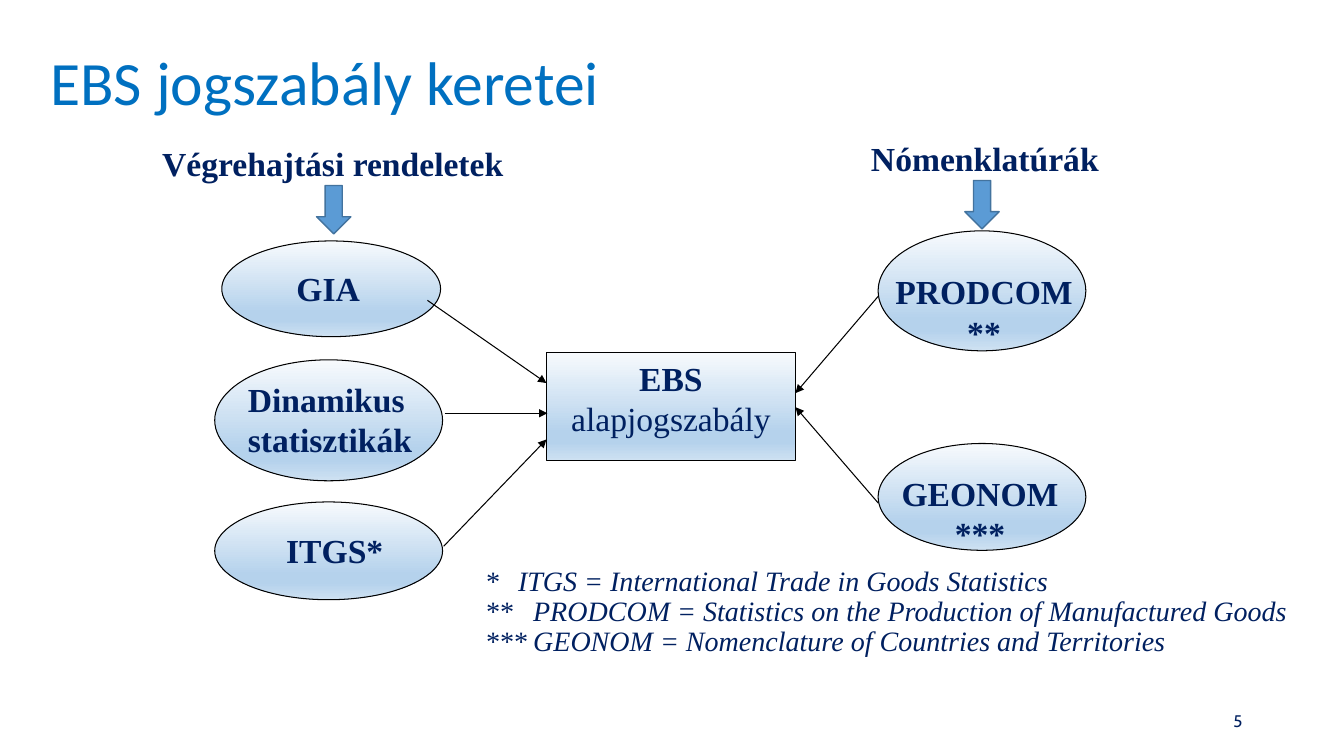
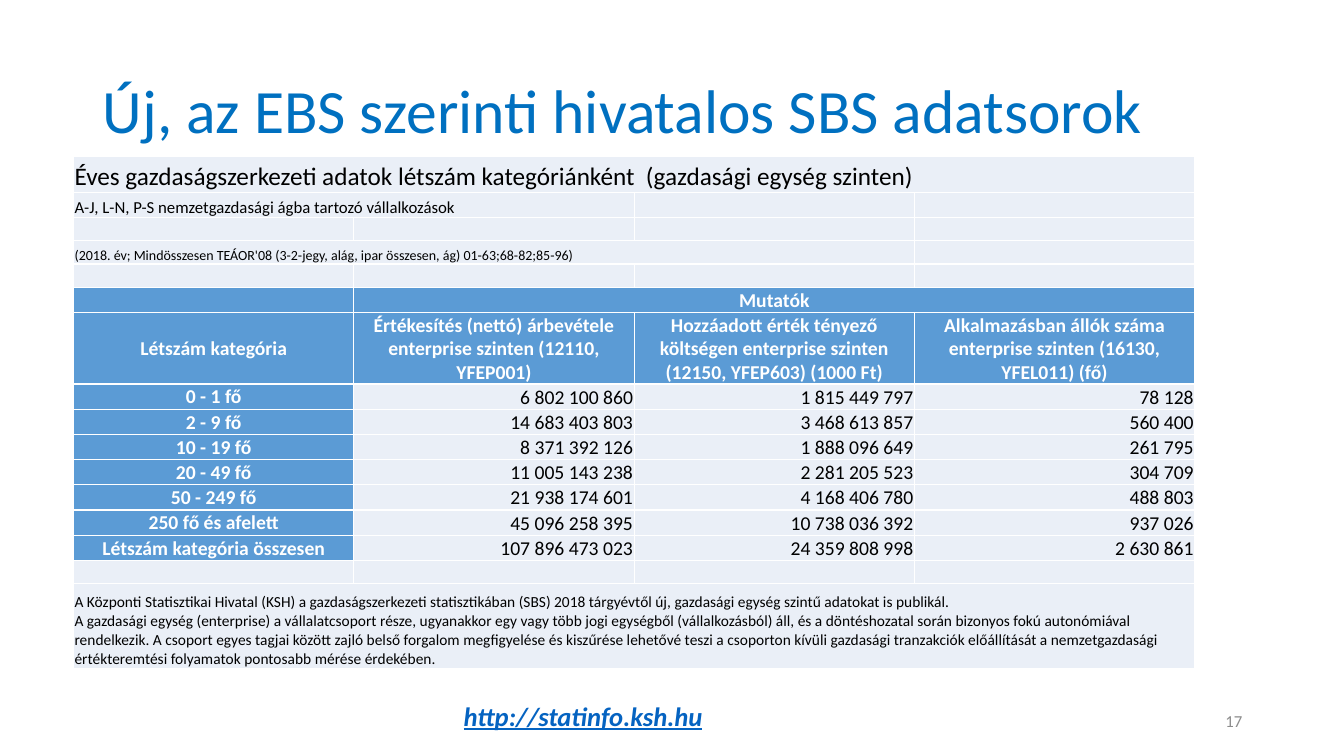
from copy import deepcopy

from pptx import Presentation
from pptx.dml.color import RGBColor
from pptx.enum.shapes import MSO_CONNECTOR, MSO_SHAPE
from pptx.enum.text import MSO_ANCHOR, MSO_AUTO_SIZE, PP_ALIGN
from pptx.oxml.ns import qn
from pptx.oxml.xmlchemy import OxmlElement
from pptx.util import Inches, Pt

TITLE_BLUE = RGBColor(0x00, 0x70, 0xC0)
NAVY = RGBColor(0x00, 0x20, 0x60)
BLACK = RGBColor(0x00, 0x00, 0x00)
WHITE = RGBColor(0xFF, 0xFF, 0xFF)
GREY = RGBColor(0x8C, 0x8C, 0x8C)
LINK_BLUE = RGBColor(0x05, 0x63, 0xC1)
ACCENT = RGBColor(0x5B, 0x9B, 0xD5)
ACCENT_DARK = RGBColor(0x43, 0x73, 0x9E)
PALE = RGBColor(0xEA, 0xEF, 0xF7)
GRADIENT = [
    (0, RGBColor(0xF7, 0xFA, 0xFD)),
    (0.74, RGBColor(0xB5, 0xD2, 0xEC)),
    (0.83, RGBColor(0xB5, 0xD2, 0xEC)),
    (1, RGBColor(0xCE, 0xE1, 0xF2)),
]
SANS, SERIF = "Calibri", "Times New Roman"

NODES = [
    ((2.2, 2.39, 2.17, 0.95), ["GIA"], (-0.03, 0.22), PP_ALIGN.CENTER),
    ((2.13, 3.57, 2.26, 1.2), ["Dinamikus", "statisztikák"], (0.23, 0.14), PP_ALIGN.LEFT),
    ((2.13, 4.98, 2.26, 0.97), ["ITGS*"], (0.06, 0.23), PP_ALIGN.CENTER),
    ((8.71, 2.29, 2.06, 1.19), ["PRODCOM", "**"], (0.02, 0.35), PP_ALIGN.CENTER),
    ((8.71, 4.4, 2.06, 1.06), ["GEONOM", "***"], (-0.02, 0.24), PP_ALIGN.CENTER),
]
ARROWS = [
    ((4.24, 2.98), (5.42, 3.8)),
    ((4.41, 4.1), (5.43, 4.1)),
    ((4.4, 5.42), (5.42, 4.36)),
    ((8.71, 4.99), (7.89, 4.04)),
    ((8.71, 2.94), (7.89, 3.9)),
]
FOOTNOTES = [
    ("*", "ITGS = International Trade in Goods Statistics", 0.33),
    ("**", "PRODCOM = Statistics on the Production of Manufactured Goods", 0.48),
    ("***", "GEONOM = Nomenclature of Countries and Territories", 0.48),
]

INTRO_ROWS = [
    (0, "Éves gazdaságszerkezeti adatok létszám kategóriánként  (gazdasági egység szinten)", 18, 4),
    (1, "A-J, L-N, P-S nemzetgazdasági ágba tartozó vállalkozások", 12, 2),
    (3, "(2018. év; Mindösszesen TEÁOR'08 (3-2-jegy, alág, ipar összesen, ág) 01-63;68-82;85-96)", 10, 3),
    (15, "A Központi Statisztikai Hivatal (KSH) a gazdaságszerkezeti statisztikában (SBS) 2018 "
         "tárgyévtől új, gazdasági egység szintű adatokat is publikál.\n"
         "A gazdasági egység (enterprise) a vállalatcsoport része, ugyanakkor egy vagy több jogi "
         "egységből (vállalkozásból) áll, és a döntéshozatal során bizonyos fokú autonómiával "
         "rendelkezik. A csoport egyes tagjai között zajló belső forgalom megfigyelése és kiszűrése "
         "lehetővé teszi a csoporton kívüli gazdasági tranzakciók előállítását a nemzetgazdasági "
         "értékteremtési folyamatok pontosabb mérése érdekében.", 11, 4),
]
HEADERS = [
    "Létszám kategória",
    "Értékesítés (nettó) árbevétele enterprise szinten (12110, YFEP001)",
    "Hozzáadott érték tényező költségen enterprise szinten (12150, YFEP603) (1000 Ft)",
    "Alkalmazásban állók száma enterprise szinten (16130, YFEL011) (fő)",
]
DATA = [
    ("0 - 1 fő", "6 802 100 860", "1 815 449 797", "78 128"),
    ("2 - 9 fő", "14 683 403 803", "3 468 613 857", "560 400"),
    ("10 - 19 fő", "8 371 392 126", "1 888 096 649", "261 795"),
    ("20 - 49 fő", "11 005 143 238", "2 281 205 523", "304 709"),
    ("50 - 249 fő", "21 938 174 601", "4 168 406 780", "488 803"),
    ("250 fő és afelett", "45 096 258 395", "10 738 036 392", "937 026"),
    ("Létszám kategória összesen", "107 896 473 023", "24 359 808 998", "2 630 861"),
]
GROUP_ROW, HEADER_ROW, FIRST_DATA_ROW = 5, 6, 7
ROW_HEIGHTS = [0.36, 0.25] + [0.23] * 3 + [0.25, 0.71] + [0.25] * 7 + [0.23, 0.84]


def inches(*values):
    """Convert numbers to lengths."""
    return [Inches(v) for v in values]


def style(p, size, color, name=SANS, bold=False, italic=False, align=PP_ALIGN.LEFT):
    """Format a whole paragraph."""
    p.alignment = align
    font = p.font
    font.name, font.size, font.bold, font.italic = name, Pt(size), bold, italic
    font.color.rgb = color


def write(tf, lines, size, color, **options):
    """Fill a text frame with one styled paragraph per line."""
    tf.text = "\n".join(lines)
    for p in tf.paragraphs:
        style(p, size, color, **options)


def add_text(slide, box, lines, size, color, anchor=MSO_ANCHOR.TOP, **options):
    """Add a wrapping text box and return its frame."""
    tf = slide.shapes.add_textbox(*inches(*box)).text_frame
    tf.word_wrap = True
    tf.vertical_anchor = anchor
    write(tf, lines, size, color, **options)
    return tf


def add_titled_slide(prs, title, box, number, number_font, number_color):
    """Add a slide with its title and page number."""
    slide = prs.slides.add_slide(prs.slide_layouts[5])
    sp = slide.shapes.title
    sp.left, sp.top, sp.width, sp.height = inches(*box)
    tf = sp.text_frame
    tf.auto_size = MSO_AUTO_SIZE.NONE
    tf.vertical_anchor = MSO_ANCHOR.MIDDLE
    write(tf, [title], 44, TITLE_BLUE)
    tf.paragraphs[0].line_spacing = 0.9
    add_text(slide, (9.42, 6.95, 3, 0.4), [number], 12, number_color,
             MSO_ANCHOR.MIDDLE, name=number_font, align=PP_ALIGN.RIGHT)
    return slide


def add_gradient_shape(slide, kind, box):
    """Add an outlined shape with the pale blue gradient."""
    sp = slide.shapes.add_shape(kind, *inches(*box))
    sp.shadow.inherit = False
    sp.line.color.rgb = BLACK
    sp.line.width = Pt(0.75)
    sp.fill.gradient()
    sp.fill.gradient_angle = 270
    stops = sp._element.spPr.find(".//" + qn("a:gsLst"))
    while len(stops) < len(GRADIENT):
        stops.append(deepcopy(stops[0]))
    for stop, (position, color) in zip(sp.fill.gradient_stops, GRADIENT):
        stop.position = position
        stop.color.rgb = color
    return sp


def add_node(slide, box, lines, offset, align):
    """Add an ellipse with its label shifted from the corner."""
    add_gradient_shape(slide, MSO_SHAPE.OVAL, box)
    left, top, width, height = box
    dx, dy = offset
    add_text(slide, (left + dx, top + dy, width, height), lines, 24, NAVY,
             name=SERIF, bold=True, align=align)


def add_arrow(slide, start, end):
    """Add a thin black arrow."""
    line = slide.shapes.add_connector(MSO_CONNECTOR.STRAIGHT, *inches(*start, *end))
    line.line.color.rgb = BLACK
    line.line.width = Pt(0.75)
    tail = OxmlElement("a:tailEnd")
    tail.set("type", "triangle")
    line.line._get_or_add_ln().append(tail)
    line._element.spPr.append(OxmlElement("a:effectLst"))


def add_group_heading(slide, box, text, arrow_left):
    """Add a heading with a block arrow below it."""
    left, top, width, height = box
    add_text(slide, box, [text], 24, NAVY, name=SERIF, bold=True)
    sp = slide.shapes.add_shape(MSO_SHAPE.DOWN_ARROW,
                                *inches(arrow_left, top + height + 0.03, 0.34, 0.48))
    sp.shadow.inherit = False
    sp.fill.solid()
    sp.fill.fore_color.rgb = ACCENT
    sp.line.color.rgb = ACCENT_DARK
    sp.line.width = Pt(1)


def add_footnotes(slide, box):
    """Add the abbreviations with hanging indents."""
    tf = add_text(slide, box, [f"{mark}\t{text}" for mark, text, _ in FOOTNOTES], 20, NAVY,
                  MSO_ANCHOR.MIDDLE, name=SERIF, italic=True)
    for p, (_, _, indent) in zip(tf.paragraphs, FOOTNOTES):
        p.line_spacing = 0.9
        pPr = p._p.get_or_add_pPr()
        pPr.set("marL", str(Inches(indent)))
        pPr.set("indent", str(-Inches(indent)))


def build_framework_slide(prs):
    """Build the diagram of the legal framework."""
    slide = add_titled_slide(prs, "EBS jogszabály keretei", (0.4, 0.43, 10.72, 0.84),
                             "5", "Cabin", NAVY)
    tf = add_gradient_shape(slide, MSO_SHAPE.RECTANGLE, (5.42, 3.5, 2.47, 1.07)).text_frame
    tf.vertical_anchor = MSO_ANCHOR.TOP
    write(tf, ["EBS", "alapjogszabály"], 24, NAVY, name=SERIF, align=PP_ALIGN.CENTER)
    tf.paragraphs[0].font.bold = True
    for node in NODES:
        add_node(slide, *node)
    for start, end in ARROWS:
        add_arrow(slide, start, end)
    add_group_heading(slide, (1.51, 1.37, 3.8, 0.44), "Végrehajtási rendeletek", 3.14)
    add_group_heading(slide, (8.54, 1.32, 2.75, 0.44), "Nómenklatúrák", 9.57)
    add_footnotes(slide, (4.71, 5.41, 8.5, 1.33))


def fill_cell(cell, text, size, color=BLACK, fill=PALE, anchor=MSO_ANCHOR.BOTTOM, **options):
    """Write and format one table cell."""
    cell.fill.solid()
    cell.fill.fore_color.rgb = fill
    cell.vertical_anchor = anchor
    cell.margin_left = cell.margin_right = cell.margin_top = Inches(0.01)
    cell.margin_bottom = 0
    write(cell.text_frame, text.split("\n"), size, color, **options)


def fill_header(cell, text):
    """Write a white bold heading on blue."""
    fill_cell(cell, text, 14, WHITE, ACCENT, MSO_ANCHOR.MIDDLE, bold=True, align=PP_ALIGN.CENTER)


def add_statistics_table(slide, left, top, width):
    """Add the table of yearly figures by size class."""
    rows, cols = len(ROW_HEIGHTS), len(HEADERS)
    table = slide.shapes.add_table(rows, cols, *inches(left, top, width, sum(ROW_HEIGHTS))).table
    table.first_row = table.horz_banding = False
    for row, height in zip(table.rows, ROW_HEIGHTS):
        row.height = Inches(height)
    for column in table.columns:
        column.width = Inches(width / cols)
    for cell in table.iter_cells():
        fill_cell(cell, "", 10)
    for row, text, size, span in INTRO_ROWS:
        fill_cell(table.cell(row, 0), text, size)
        table.cell(row, 0).merge(table.cell(row, span - 1))
    fill_header(table.cell(GROUP_ROW, 0), "")
    fill_header(table.cell(GROUP_ROW, 1), "Mutatók")
    table.cell(GROUP_ROW, 1).merge(table.cell(GROUP_ROW, cols - 1))
    for col, text in enumerate(HEADERS):
        fill_header(table.cell(HEADER_ROW, col), text)
    for row, (label, *values) in enumerate(DATA, FIRST_DATA_ROW):
        fill_header(table.cell(row, 0), label)
        for col, value in enumerate(values, 1):
            fill_cell(table.cell(row, col), value, 14, align=PP_ALIGN.RIGHT)


def build_statistics_slide(prs):
    """Build the slide with the statistics table."""
    slide = add_titled_slide(prs, "Új, az EBS szerinti hivatalos SBS adatsorok",
                             (0.92, 0.4, 11.5, 1.45), "17", SANS, GREY)
    add_statistics_table(slide, 0.73, 1.55, 11.12)
    tf = add_text(slide, (4.5, 6.93, 3.53, 0.41), ["http://statinfo.ksh.hu"], 19, LINK_BLUE,
                  bold=True, italic=True)
    p = tf.paragraphs[0]
    p.line_spacing = 0.9
    p.font.underline = True


def main():
    """Build and save the presentation."""
    prs = Presentation()
    prs.slide_width, prs.slide_height = inches(13.33, 7.5)
    build_framework_slide(prs)
    build_statistics_slide(prs)
    prs.save("out.pptx")


if __name__ == "__main__":
    main()
